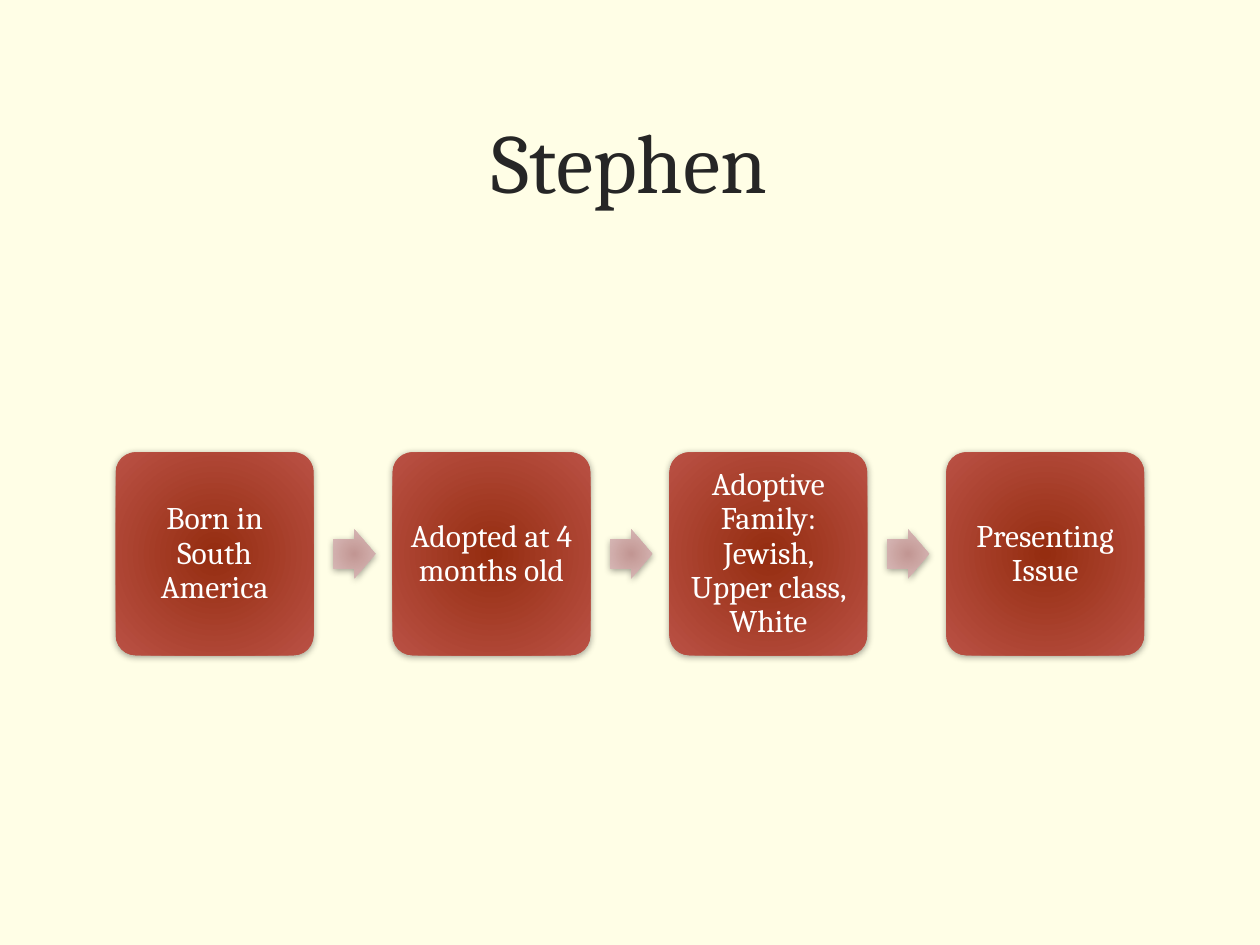
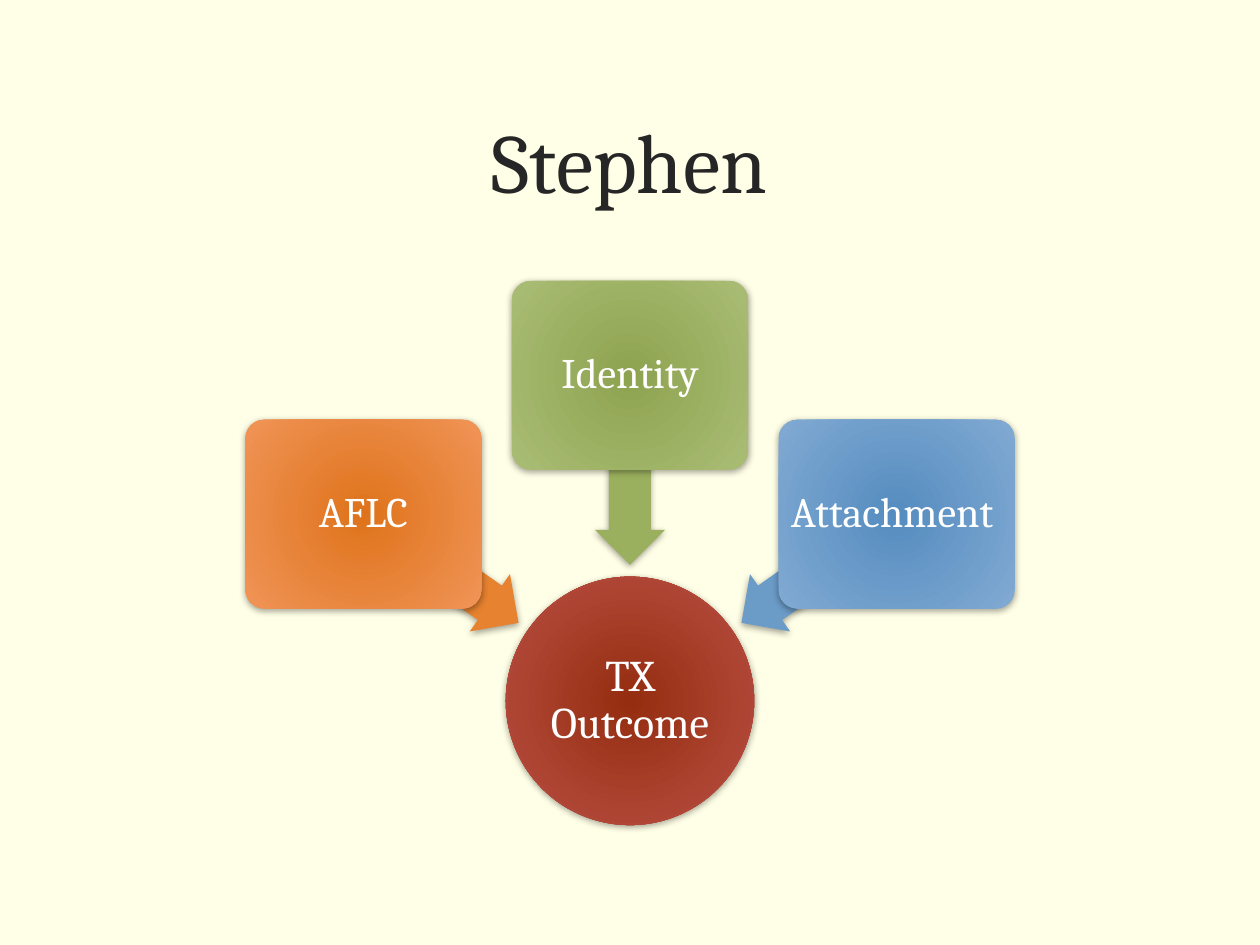
from dataclasses import dataclass
from math import cos, radians, sin

from pptx import Presentation
from pptx.dml.color import RGBColor
from pptx.enum.shapes import MSO_SHAPE as SHAPE
from pptx.enum.text import MSO_ANCHOR as ANCHOR, PP_ALIGN as ALIGN
from pptx.oxml import parse_xml
from pptx.oxml.ns import nsdecls, qn
from pptx.util import Pt

TITLE = "Stephen"
HISTORY = [
    "Born in South America",
    "Adopted at 4 months old",
    "Adoptive Family: Jewish, Upper class, White",
    "Presenting Issue",
]
OUTCOME = "TX Outcome"


@dataclass(frozen=True)
class Theme:
    font: str = "Cambria"
    background: str = "FFFEE6"
    title: str = "262626"
    text: str = "FFFFFF"
    # Gradients run from the centre to the edge
    red: tuple = ("952D10", "BA5145")
    pale_red: tuple = ("C29693", "DBBEBC")
    orange: tuple = ("DF731B", "F09457")
    green: tuple = ("8EA350", "AABD75")
    blue: tuple = ("558CBF", "81AAD3")
    title_size: int = 48
    step_size: int = 18
    factor_size: int = 24
    outcome_size: int = 25


THEME = Theme()

# Label, direction from the outcome in degrees, box gradient, arrow colour
FACTORS = [
    ("AFLC", 215, THEME.orange, "E68230"),
    ("Identity", 270, THEME.green, "9BB05E"),
    ("Attachment ", 325, THEME.blue, "6B9BC7"),
]

STEP_LEFT, STEP_TOP, STEP_W, STEP_H = 66.2, 258.5, 113, 116
STEP_PITCH = 158.2
STEP_ARROW_W, STEP_ARROW_H = 24, 28

OUTCOME_X, OUTCOME_Y, OUTCOME_D = 360, 400.5, 142
FACTOR_RADIUS, FACTOR_W, FACTOR_H = 186, 135, 108
ARROW_RADIUS, ARROW_W, ARROW_H = 132, 108.5, 40


def style_font(p, size, color):
    p.alignment = ALIGN.CENTER
    for r in p.runs:
        r.font.name = THEME.font
        r.font.size = Pt(size)
        r.font.color.rgb = RGBColor.from_string(color)


def fill_radial(sp, colors):
    sp.fill.gradient()
    for stop, color in zip(sp.fill.gradient_stops, colors):
        stop.color.rgb = RGBColor.from_string(color)
    grad = sp.element.spPr.find(qn("a:gradFill"))
    grad.remove(grad.find(qn("a:lin")))
    grad.append(parse_xml(
        f'<a:path {nsdecls("a")} path="circle">'
        '<a:fillToRect l="40000" t="100000" r="40000" b="100000"/></a:path>'))


def add_shadow(sp):
    sp.shadow.inherit = False
    sp.element.spPr.find(qn("a:effectLst")).append(parse_xml(
        f'<a:outerShdw {nsdecls("a")} blurRad="{Pt(4)}" dist="{Pt(1)}" '
        'dir="5400000" rotWithShape="0"><a:srgbClr val="000000">'
        '<a:alpha val="37000"/></a:srgbClr></a:outerShdw>'))


def add_centered(s, kind, x, y, w, h, fill, adjustments=()):
    """Add a shadowed shape centred on x, y; fill is a colour or a gradient pair."""
    sp = s.shapes.add_shape(kind, Pt(x - w / 2), Pt(y - h / 2), Pt(w), Pt(h))
    for i, value in enumerate(adjustments):
        sp.adjustments[i] = value
    if isinstance(fill, tuple):
        fill_radial(sp, fill)
    else:
        sp.fill.solid()
        sp.fill.fore_color.rgb = RGBColor.from_string(fill)
    sp.line.fill.background()
    add_shadow(sp)
    return sp


def add_label(sp, text, size, inset):
    tf = sp.text_frame
    tf.text = text
    tf.word_wrap = True
    tf.vertical_anchor = ANCHOR.MIDDLE
    tf.margin_left = tf.margin_right = tf.margin_top = tf.margin_bottom = Pt(inset)
    p = tf.paragraphs[0]
    p.line_spacing = 0.9
    style_font(p, size, THEME.text)


def add_box(s, text, x, y, w, h, fill, size, inset):
    sp = add_centered(s, SHAPE.ROUNDED_RECTANGLE, x, y, w, h, fill, [0.1])
    add_label(sp, text, size, inset)


def add_titled_slide(prs):
    s = prs.slides.add_slide(prs.slide_layouts[5])
    title = s.shapes.title
    title.left, title.top, title.width, title.height = Pt(43.2), Pt(34.5), Pt(633), Pt(114)
    title.text_frame.text = TITLE
    title.text_frame.vertical_anchor = ANCHOR.MIDDLE
    style_font(title.text_frame.paragraphs[0], THEME.title_size, THEME.title)
    return s


def build_history(prs):
    s = add_titled_slide(prs)
    y = STEP_TOP + STEP_H / 2
    for i, step in enumerate(HISTORY):
        x = STEP_LEFT + STEP_W / 2 + i * STEP_PITCH
        if i:
            arrow_x = x - STEP_PITCH + 0.6 * STEP_W + STEP_ARROW_W / 2
            add_centered(s, SHAPE.RIGHT_ARROW, arrow_x, y, STEP_ARROW_W,
                         STEP_ARROW_H, THEME.pale_red, [0.6, 0.5])
        add_box(s, step, x, y, STEP_W, STEP_H, THEME.red, THEME.step_size, 5)


def build_outcome(prs):
    s = add_titled_slide(prs)
    circle = add_centered(s, SHAPE.OVAL, OUTCOME_X, OUTCOME_Y,
                          OUTCOME_D, OUTCOME_D, THEME.red)
    add_label(circle, OUTCOME, THEME.outcome_size, 1.25)
    for label, angle, gradient, arrow_color in FACTORS:
        dx, dy = cos(radians(angle)), sin(radians(angle))
        arrow = add_centered(s, SHAPE.LEFT_ARROW, OUTCOME_X + ARROW_RADIUS * dx,
                             OUTCOME_Y + ARROW_RADIUS * dy, ARROW_W, ARROW_H,
                             arrow_color, [0.6, 0.5])
        arrow.rotation = angle
        add_box(s, label, OUTCOME_X + FACTOR_RADIUS * dx,
                OUTCOME_Y + FACTOR_RADIUS * dy, FACTOR_W, FACTOR_H,
                gradient, THEME.factor_size, 3.6)


def main():
    prs = Presentation()
    prs.slide_width, prs.slide_height = Pt(720), Pt(540)
    background = prs.slide_master.background.fill
    background.solid()
    background.fore_color.rgb = RGBColor.from_string(THEME.background)
    build_history(prs)
    build_outcome(prs)
    prs.save("out.pptx")


if __name__ == "__main__":
    main()
